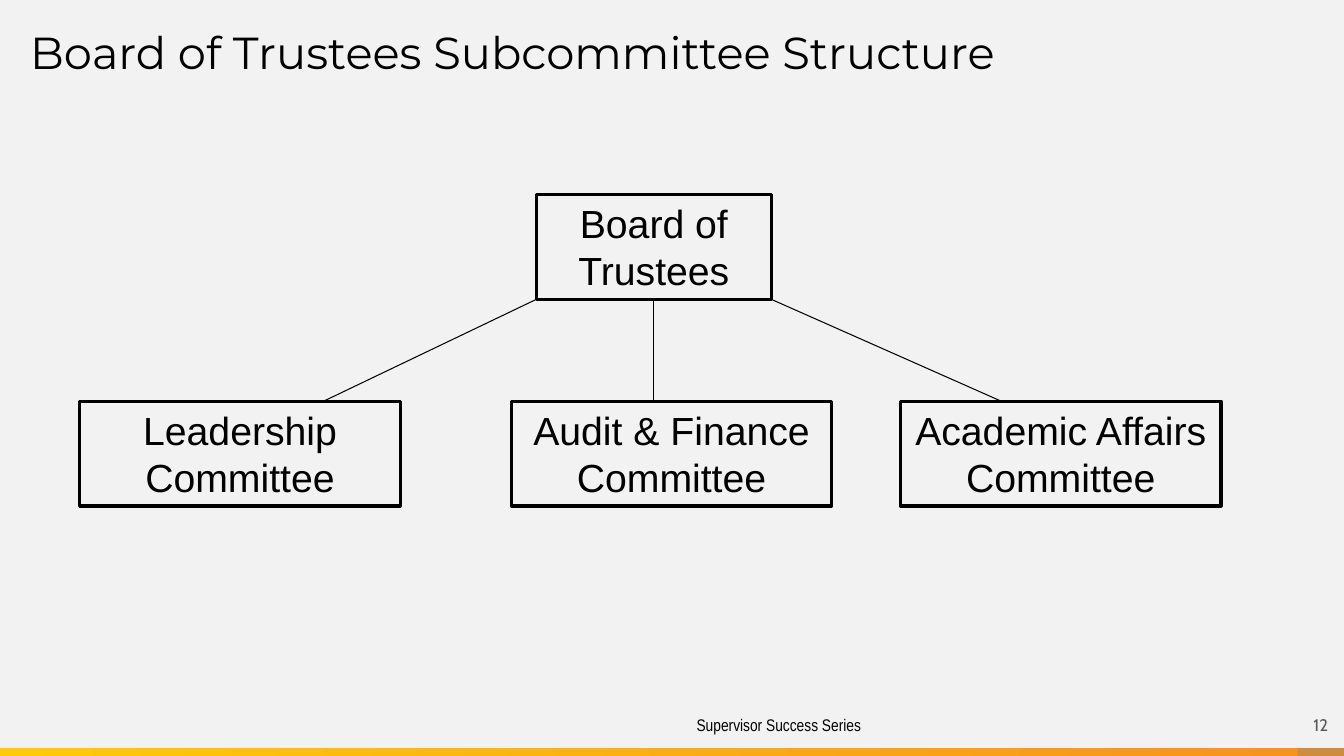
from lxml.etree import SubElement
from pptx import Presentation
from pptx.dml.color import RGBColor
from pptx.enum.shapes import MSO_CONNECTOR, MSO_SHAPE
from pptx.enum.text import MSO_ANCHOR, MSO_AUTO_SIZE, PP_ALIGN
from pptx.oxml.ns import qn
from pptx.util import Inches, Pt

COLORS = {
    "background": "F2F2F2",
    "ink": "000000",
    "page_number": "595959",
    "bar_start": "FFCA08",
    "bar_end": "F8931D",
    "bar_corner": "CE8D3E",
}

BOARD_LEFT, BOARD_TOP, BOARD_WIDTH = 5.32, 1.93, 2.33
COMMITTEE_TOP, COMMITTEE_WIDTH = 3.98, 3.18
BOX_HEIGHT = 1.04
BOARD_BOTTOM = BOARD_TOP + BOX_HEIGHT
BOARD_CENTER = BOARD_LEFT + BOARD_WIDTH / 2

COMMITTEES = [
    ("Leadership Committee", 0.79),
    ("Audit & Finance Committee", 5.07),
    ("Academic Affairs Committee", 8.93),
]


def color(name):
    return RGBColor.from_string(COLORS[name])


def write(shape, text, size, font, ink="ink", align=PP_ALIGN.LEFT, inset=(0.1, 0.05)):
    frame = shape.text_frame
    frame.word_wrap = True
    frame.margin_left = frame.margin_right = Inches(inset[0])
    frame.margin_top = frame.margin_bottom = Inches(inset[1])
    paragraph = frame.paragraphs[0]
    paragraph.alignment = align
    run = paragraph.add_run()
    run.text = text
    run.font.size = Pt(size)
    run.font.name = font
    run.font.color.rgb = color(ink)
    return frame


def add_text(slide, bounds, *text, **style):
    return write(slide.shapes.add_textbox(*map(Inches, bounds)), *text, **style)


def add_rectangle(slide, bounds, fill=None):
    rectangle = slide.shapes.add_shape(MSO_SHAPE.RECTANGLE, *map(Inches, bounds))
    rectangle.shadow.inherit = False
    rectangle.line.fill.background()
    if fill:
        rectangle.fill.solid()
        rectangle.fill.fore_color.rgb = color(fill)
    else:
        rectangle.fill.background()
    return rectangle


def add_group_box(slide, name, left, top, width):
    """Add one outlined box of the organisation chart."""
    box = add_rectangle(slide, (left, top, width, BOX_HEIGHT))
    box.line.color.rgb = color("ink")
    box.line.width = Pt(2.25)
    frame = write(box, name, 28, "Arial", align=PP_ALIGN.CENTER)
    frame.vertical_anchor = MSO_ANCHOR.TOP
    frame.auto_size = MSO_AUTO_SIZE.SHAPE_TO_FIT_TEXT
    return box


def add_branch(slide, start_x, end_x):
    """Add a line from the board's lower edge to the committee row."""
    ends = (start_x, BOARD_BOTTOM, end_x, COMMITTEE_TOP)
    branch = slide.shapes.add_connector(MSO_CONNECTOR.STRAIGHT, *map(Inches, ends))
    branch.line.color.rgb = color("ink")
    branch.line.width = Pt(0.75)
    SubElement(branch.element.spPr, qn("a:effectLst"))
    return branch


def add_footer(slide):
    bar = add_rectangle(slide, (0, 7.42, 12.87, 0.08))
    bar.fill.gradient()
    bar.fill.gradient_angle = 0
    for stop, position, name in zip(bar.fill.gradient_stops, (0, 1), ("bar_start", "bar_end")):
        stop.position = position
        stop.color.rgb = color(name)
    add_rectangle(slide, (12.87, 7.42, 0.46, 0.08), "bar_corner")
    add_text(slide, (6.81, 7.04, 5.41, 0.5), "Supervisor Success Series", 12, "Arial Narrow")
    page_number = add_rectangle(slide, (12.87, 6.96, 0.46, 0.46), "background")
    frame = write(page_number, "12", 12, "Cabin", "page_number", PP_ALIGN.CENTER, (0, 0))
    frame.vertical_anchor = MSO_ANCHOR.MIDDLE


def add_structure(slide):
    board = add_group_box(slide, "Board of Trustees", BOARD_LEFT, BOARD_TOP, BOARD_WIDTH)
    for name, left in COMMITTEES:
        add_group_box(slide, name, left, COMMITTEE_TOP, COMMITTEE_WIDTH)
    add_branch(slide, BOARD_CENTER, BOARD_CENTER).begin_connect(board, 2)
    add_branch(slide, BOARD_LEFT, 3.21)
    add_branch(slide, BOARD_LEFT + BOARD_WIDTH, 9.93)


def main():
    presentation = Presentation()
    presentation.slide_width = Inches(13.33)
    presentation.slide_height = Inches(7.5)
    slide = presentation.slides.add_slide(presentation.slide_layouts[6])
    slide.background.fill.solid()
    slide.background.fill.fore_color.rgb = color("background")
    add_footer(slide)
    title = add_text(slide, (0.3, 0.31, 12.73, 0.89), "Board of Trustees Subcommittee Structure",
                     32, "Montserrat", inset=(0, 0))
    title.paragraphs[0].line_spacing = 0.9
    add_structure(slide)
    presentation.save("out.pptx")


if __name__ == "__main__":
    main()
